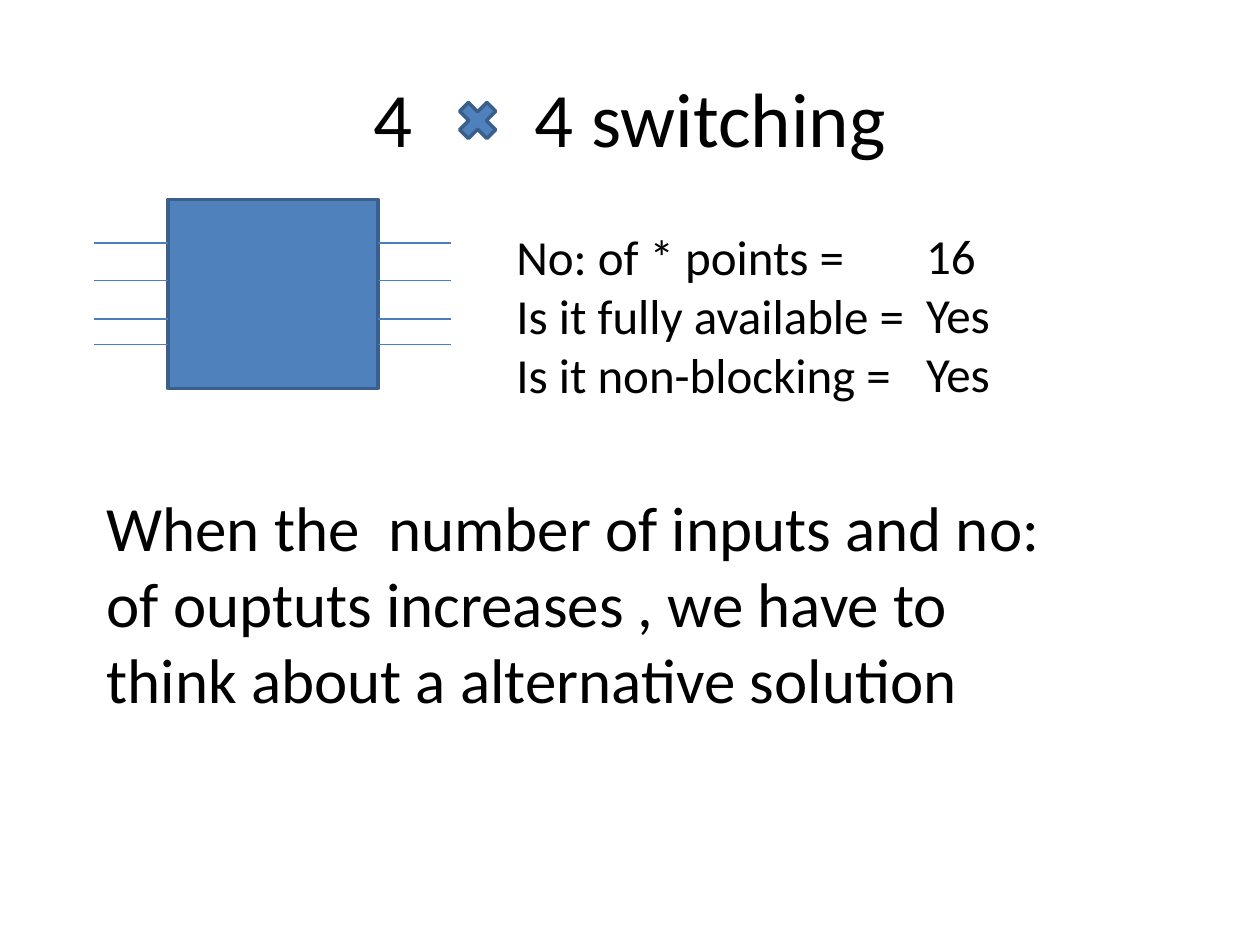
"""Build the slide on 4 by 4 switching."""
from lxml.etree import SubElement
from pptx import Presentation
from pptx.dml.color import RGBColor
from pptx.enum.shapes import MSO_CONNECTOR, MSO_SHAPE
from pptx.enum.text import MSO_ANCHOR, MSO_AUTO_SIZE, PP_ALIGN
from pptx.oxml.ns import qn
from pptx.util import Cm, Pt


def paint(colour_format, colour):
    colour_format.rgb = RGBColor.from_string(colour)


def write(paragraph, size):
    paragraph.font.name = "Calibri"
    paragraph.font.size = Pt(size)
    paint(paragraph.font.color, "000000")


deck = Presentation()
deck.slide_width, deck.slide_height = Cm(25.4), Cm(19.05)
page = deck.slides.add_slide(deck.slide_layouts[5])

title = page.shapes.title
title.left, title.top, title.width, title.height = Cm(1.27), Cm(0.76), Cm(22.86), Cm(3.18)
title.text_frame.vertical_anchor = MSO_ANCHOR.MIDDLE
heading = title.text_frame.paragraphs[0]
heading.alignment = PP_ALIGN.CENTER
for words in ("4", " ", "4 switching"):
    span = heading.add_run()
    span.text = words
    if words == " ":
        span.font._element.set("spc", "5970")
write(heading, 44)

switch = page.shapes.add_group_shape()
for parent, kind, left, top, width, height in (
    (page, MSO_SHAPE.MATH_MULTIPLY, 9.1, 1.9, 1.06, 1.06),
    (switch, MSO_SHAPE.FLOWCHART_PROCESS, 3.39, 4.02, 4.23, 3.81),
):
    shape = parent.shapes.add_shape(kind, Cm(left), Cm(top), Cm(width), Cm(height))
    shape.shadow.inherit = False
    shape.fill.solid()
    paint(shape.fill.fore_color, "4F81BD")
    paint(shape.line.color, "3A5F8C")
    shape.line.width = Pt(2)

for start in (1.9, 7.62):
    for height in (4.9, 5.66, 6.43, 6.94):
        wire = switch.shapes.add_connector(
            MSO_CONNECTOR.STRAIGHT, Cm(start), Cm(height), Cm(start + 1.48), Cm(height)
        )
        paint(wire.line.color, "4B7EBC")
        wire.line.width = Pt(0.75)
        SubElement(wire._element.spPr, qn("a:effectLst"))

questions = ("No: of * points =", "Is it fully available =", "Is it non-blocking =")
answers = ("16", "Yes", "Yes")
conclusion = (
    "When the  number of inputs and no: of ouptuts increases , "
    "we have to think about a alternative solution",
)
for lines, size, left, top, width, height in (
    (questions, 28, 10.16, 4.45, 13.13, 5.05),
    (answers, 28, 18.42, 4.42, 4.01, 3.84),
    (conclusion, 36, 1.9, 9.73, 20.12, 4.88),
):
    box = page.shapes.add_textbox(Cm(left), Cm(top), Cm(width), Cm(height))
    frame = box.text_frame
    frame.word_wrap = True
    frame.auto_size = MSO_AUTO_SIZE.SHAPE_TO_FIT_TEXT
    frame.text = "\n".join(lines)
    for paragraph in frame.paragraphs:
        write(paragraph, size)

deck.save("out.pptx")
